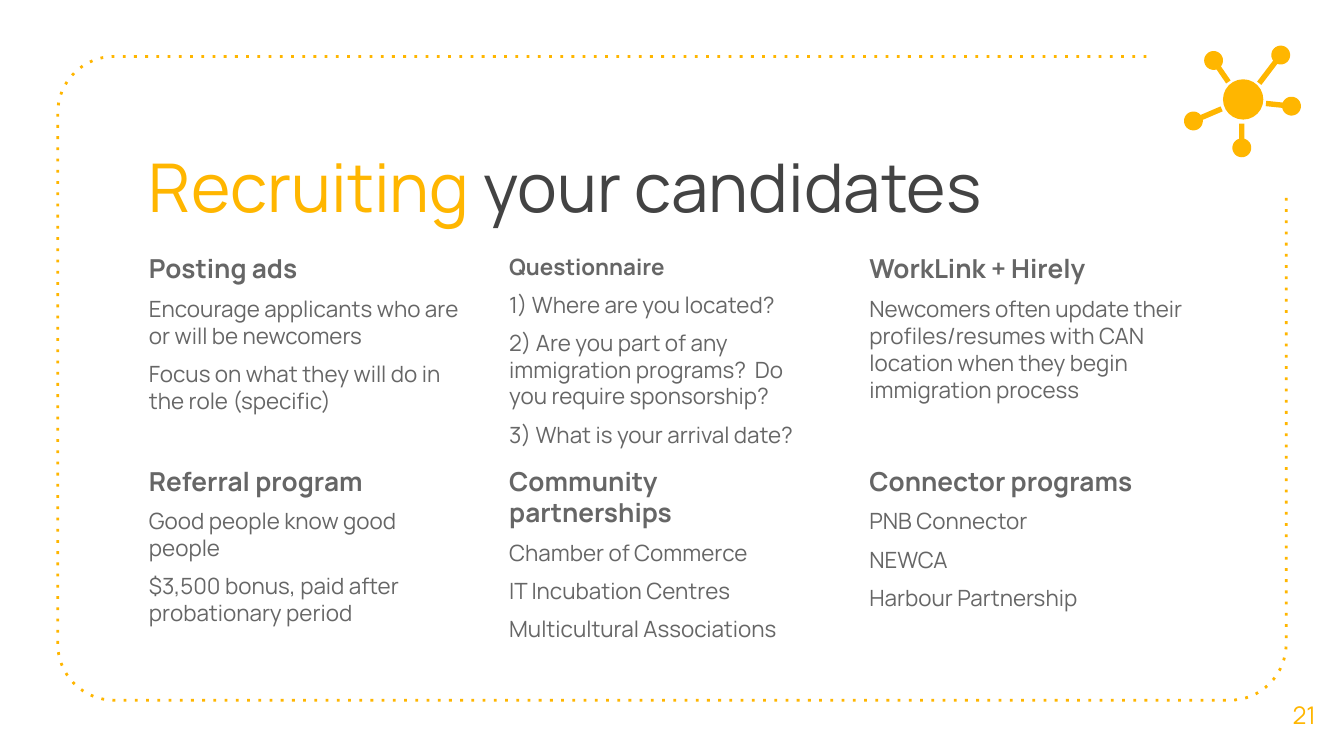
from math import asin, atan2, cos, degrees, hypot, radians, sin

from lxml.etree import SubElement
from pptx import Presentation
from pptx.dml.color import RGBColor
from pptx.enum.shapes import MSO_SHAPE
from pptx.enum.text import MSO_ANCHOR, PP_ALIGN
from pptx.oxml.ns import qn
from pptx.util import Inches, Pt

YELLOW = RGBColor(0xFF, 0xB6, 0x00)
DARK = RGBColor(0x43, 0x43, 0x43)
GRAY = RGBColor(0x66, 0x66, 0x66)
FONT = "Manrope"

SLIDE_WIDTH = 10
SLIDE_HEIGHT = SLIDE_WIDTH * 9 / 16

TITLE = [("Recruiting", YELLOW), (" your candidates", DARK)]
PAGE_NUMBER = "21"

# heading, heading size, body paragraphs; in reading order
TOPICS = [
    ("Posting ads", 14, ["Encourage applicants who are or will be newcomers",
                         "Focus on what they will do in the role (specific)"]),
    ("Questionnaire", 12, ["1) Where are you located?",
                           "2) Are you part of any immigration programs?  Do you require sponsorship?",
                           "3) What is your arrival date?"]),
    ("WorkLink + Hirely", 14, ["Newcomers often update their profiles/resumes with CAN "
                               "location when they begin immigration process"]),
    ("Referral program", 14, ["Good people know good people",
                              "$3,500 bonus, paid after probationary period"]),
    ("Community partnerships", 14, ["Chamber of Commerce", "IT Incubation Centres",
                                    "Multicultural Associations"]),
    ("Connector programs", 14, ["PNB Connector", "NEWCA", "Harbour Partnership"]),
]
COLUMNS = 3
GRID_LEFT, GRID_TOP = 1.01, 1.78
COLUMN_STEP, ROW_STEP = 2.68, 1.58

FRAME_LEFT, FRAME_TOP, FRAME_RIGHT, FRAME_BOTTOM = 0.43, 0.42, 9.57, 5.21
CORNER_RADIUS = 0.42
FRAME_START, FRAME_END = (8.53, FRAME_TOP), (FRAME_RIGHT, 1.46)

HUB, HUB_RADIUS = (9.25, 0.74), 0.15
NODE_RADIUS, SPOKE_HALF_WIDTH = 0.07, 0.02
# centre of each outer node, inner end of its spoke
SPOKES = [((9.53, 0.41), (9.37, 0.62)), ((9.03, 0.45), (9.14, 0.61)),
          ((8.88, 0.9), (9.09, 0.81)), ((9.24, 1.1), (9.24, 0.92)),
          ((9.61, 0.79), (9.42, 0.77))]


def add_text_box(slide, left, top, width, height):
    frame = slide.shapes.add_textbox(*map(Inches, (left, top, width, height))).text_frame
    frame.word_wrap = True
    frame.margin_left = frame.margin_right = Inches(0.1)
    frame.margin_top = frame.margin_bottom = Inches(0.1)
    return frame


def add_run(paragraph, text, size, color, bold=False):
    run = paragraph.add_run()
    run.text = text
    run.font.name = FONT
    run.font.size = Pt(size)
    run.font.bold = bold
    run.font.color.rgb = color


def arc(center, radius, start, end, steps=16):
    """Points along a circle between two angles in degrees."""
    angles = [radians(start + (end - start) * i / steps) for i in range(steps + 1)]
    return [(center[0] + radius * cos(a), center[1] + radius * sin(a)) for a in angles]


def add_outline(slide, points, close):
    points = [(Inches(x), Inches(y)) for x, y in points]
    builder = slide.shapes.build_freeform(*points[0], scale=1.0)
    builder.add_line_segments(points[1:], close=close)
    shape = builder.convert_to_shape()
    shape.shadow.inherit = False
    return shape


def fill_yellow(shape):
    shape.fill.solid()
    shape.fill.fore_color.rgb = YELLOW
    shape.line.fill.background()


def add_frame(slide):
    left, right = FRAME_LEFT + CORNER_RADIUS, FRAME_RIGHT - CORNER_RADIUS
    top, bottom = FRAME_TOP + CORNER_RADIUS, FRAME_BOTTOM - CORNER_RADIUS
    points = [FRAME_START]
    for center, start in [((left, top), 270), ((left, bottom), 180), ((right, bottom), 90)]:
        points += arc(center, CORNER_RADIUS, start, start - 90)
    shape = add_outline(slide, points + [FRAME_END], close=False)
    shape.fill.background()
    shape.line.color.rgb = YELLOW
    shape.line.width = Pt(1.5)
    SubElement(shape._element.spPr.find(qn("a:ln")), qn("a:prstDash"), val="dot")


def add_spoke(slide, node, inner_end):
    """Draw an outer node and its spoke as one outline."""
    dx, dy = inner_end[0] - node[0], inner_end[1] - node[1]
    length = hypot(dx, dy)
    direction = degrees(atan2(dy, dx))
    opening = degrees(asin(SPOKE_HALF_WIDTH / NODE_RADIUS))
    side_x, side_y = -dy / length * SPOKE_HALF_WIDTH, dx / length * SPOKE_HALF_WIDTH
    points = arc(node, NODE_RADIUS, direction + opening, direction + 360 - opening, 40)
    points += [(inner_end[0] - side_x, inner_end[1] - side_y),
               (inner_end[0] + side_x, inner_end[1] + side_y)]
    fill_yellow(add_outline(slide, points, close=True))


def add_network_icon(slide):
    for node, inner_end in SPOKES:
        add_spoke(slide, node, inner_end)
    hub = slide.shapes.add_shape(
        MSO_SHAPE.OVAL, Inches(HUB[0] - HUB_RADIUS), Inches(HUB[1] - HUB_RADIUS),
        Inches(2 * HUB_RADIUS), Inches(2 * HUB_RADIUS))
    hub.shadow.inherit = False
    fill_yellow(hub)


def add_topic(slide, index, heading, heading_size, lines):
    row, column = divmod(index, COLUMNS)
    frame = add_text_box(slide, GRID_LEFT + column * COLUMN_STEP,
                         GRID_TOP + row * ROW_STEP, 2.55, 1.62)
    paragraph = frame.paragraphs[0]
    paragraph.space_before = Pt(6)
    add_run(paragraph, heading, heading_size, GRAY, bold=True)
    for line in lines:
        paragraph = frame.add_paragraph()
        paragraph.space_before = Pt(6)
        add_run(paragraph, line, 12, GRAY)


def main():
    presentation = Presentation()
    presentation.slide_width = Inches(SLIDE_WIDTH)
    presentation.slide_height = Inches(SLIDE_HEIGHT)
    slide = presentation.slides.add_slide(presentation.slide_layouts[6])

    add_frame(slide)
    title = add_text_box(slide, 1.01, 0.98, 7.51, 0.94)
    for text, color in TITLE:
        add_run(title.paragraphs[0], text, 36, color)
    for index, topic in enumerate(TOPICS):
        add_topic(slide, index, *topic)
    number = add_text_box(slide, 9.41, 5.02, 0.59, 0.6)
    number.vertical_anchor = MSO_ANCHOR.MIDDLE
    number.paragraphs[0].alignment = PP_ALIGN.CENTER
    add_run(number.paragraphs[0], PAGE_NUMBER, 13, YELLOW)
    add_network_icon(slide)

    presentation.save("out.pptx")


if __name__ == "__main__":
    main()
